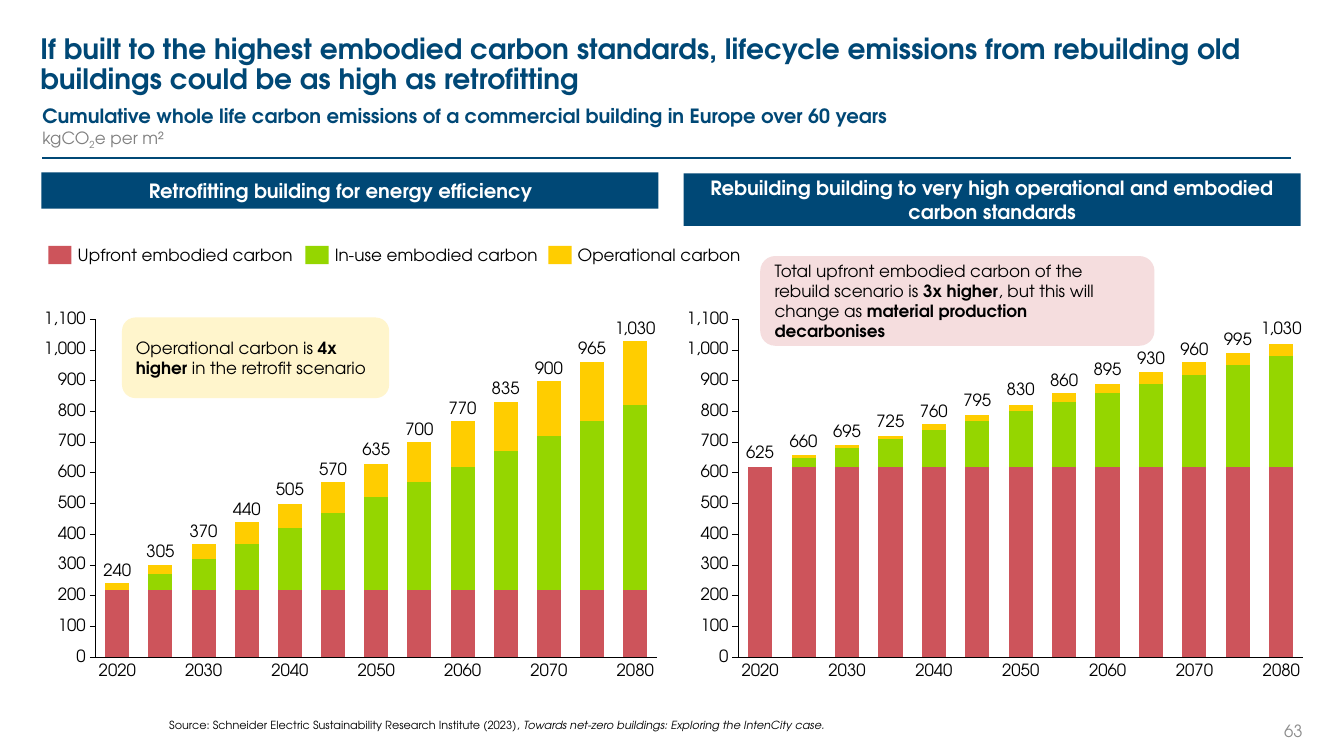
from lxml import etree
from pptx import Presentation
from pptx import util as u
from pptx.chart.data import CategoryChartData
from pptx.dml.color import RGBColor
from pptx.enum import chart as charts, shapes, text
from pptx.oxml.ns import qn

NAVY = RGBColor(0x00, 0x48, 0x76)
BLACK = RGBColor(0x00, 0x00, 0x00)
WHITE = RGBColor(0xFF, 0xFF, 0xFF)
GREY = RGBColor(0x80, 0x80, 0x80)
PAGE_GREY = RGBColor(0x8C, 0x8C, 0x8C)
RED = RGBColor(0xCD, 0x54, 0x5B)
GREEN = RGBColor(0x95, 0xD6, 0x00)
YELLOW = RGBColor(0xFF, 0xCD, 0x00)
PALE_YELLOW = RGBColor(0xFF, 0xF5, 0xCC)
PALE_RED = RGBColor(0xF5, 0xDD, 0xDE)

FONT = "TeX Gyre Adventor"
LEFT, CENTER, RIGHT = text.PP_ALIGN.LEFT, text.PP_ALIGN.CENTER, text.PP_ALIGN.RIGHT
TOP, MIDDLE, BOTTOM = text.MSO_ANCHOR.TOP, text.MSO_ANCHOR.MIDDLE, text.MSO_ANCHOR.BOTTOM
RECT, ROUNDED = shapes.MSO_SHAPE.RECTANGLE, shapes.MSO_SHAPE.ROUNDED_RECTANGLE

# Chart geometry shared by both panels
CHART_TOP, CHART_HEIGHT = 2.97, 3.75
PLOT_X, PLOT_Y, PLOT_W, PLOT_H = 0.11, 0.053, 0.875, 0.894
AXIS_MAX = 1100
LABEL_HEIGHT, LABEL_RISE = 0.18, 0.21
PERIODS = range(13)


class Deck:
    """Holds the style and the current slide."""

    def __init__(self):
        self.prs = Presentation()
        self.prs.slide_width = u.Inches(13.33)
        self.prs.slide_height = u.Inches(7.5)
        self.slide = self.prs.slides.add_slide(self.prs.slide_layouts[5])

    def frame(self, shape, insets=(0, 0, 0, 0), anchor=TOP, wrap=True):
        tf = shape.text_frame
        tf.word_wrap = wrap
        tf.auto_size = text.MSO_AUTO_SIZE.NONE
        tf.vertical_anchor = anchor
        tf.margin_left, tf.margin_top, tf.margin_right, tf.margin_bottom = map(u.Inches, insets)
        return tf

    def add_runs(self, paragraph, parts, size, color, bold=False, align=LEFT, spacing=1.0):
        """Parts are strings, or (string, "bold" or "italic") pairs."""
        paragraph.alignment = align
        paragraph.line_spacing = spacing
        for part in [parts] if isinstance(parts, str) else parts:
            words, emphasis = (part, "") if isinstance(part, str) else part
            run = paragraph.add_run()
            run.text = words
            run.font.name, run.font.size = FONT, u.Pt(size)
            run.font.bold = bold or emphasis == "bold"
            run.font.italic = emphasis == "italic"
            run.font.color.rgb = color

    def title(self, words, at):
        title = self.slide.shapes.title
        title.left, title.top, title.width, title.height = map(u.Inches, at)
        tf = self.frame(title, anchor=MIDDLE)
        self.add_runs(tf.paragraphs[0], words, 20, NAVY, bold=True, spacing=0.9)

    def text(self, parts, at, size=12, color=BLACK, insets=(0, 0, 0, 0), anchor=TOP,
             wrap=True, **style):
        box = self.slide.shapes.add_textbox(*map(u.Inches, at))
        tf = self.frame(box, insets, anchor, wrap)
        self.add_runs(tf.paragraphs[0], parts, size, color, **style)
        return tf

    def label(self, words, at, align=CENTER, anchor=TOP):
        self.text(words, at, anchor=anchor, wrap=False, align=align, spacing=0.9)

    def block(self, preset, at, fill):
        block = self.slide.shapes.add_shape(preset, *map(u.Inches, at))
        block.shadow.inherit = False
        block.fill.solid()
        block.fill.fore_color.rgb = fill
        block.line.fill.background()
        return block

    def header(self, words, at, right_inset=0.08):
        tf = self.frame(self.block(RECT, at, NAVY), (0.08, 0.08, right_inset, 0.08), MIDDLE)
        self.add_runs(tf.paragraphs[0], words, 14, WHITE, bold=True, align=CENTER)

    def callout(self, parts, at, fill):
        tf = self.frame(self.block(ROUNDED, at, fill), (0.1, 0.05, 0.1, 0.05), MIDDLE)
        self.add_runs(tf.paragraphs[0], parts, 12, BLACK)

    def rule(self, left, right, y):
        rule = self.slide.shapes.add_connector(
            shapes.MSO_CONNECTOR.STRAIGHT, *map(u.Inches, (left, y, right, y)))
        rule.line.color.rgb = NAVY
        rule.line.width = u.Pt(1.5)
        etree.SubElement(rule.element.spPr, qn("a:effectLst"))

    def stacked_chart(self, series, left, width):
        data = CategoryChartData()
        data.categories = [str(period + 1) for period in PERIODS]
        for name, values, _ in series:
            data.add_series(name, values)
        chart = self.slide.shapes.add_chart(
            charts.XL_CHART_TYPE.COLUMN_STACKED,
            *map(u.Inches, (left, CHART_TOP, width, CHART_HEIGHT)), data).chart
        chart.has_legend = chart.has_title = False
        chart.font.name, chart.font.size = FONT, u.Pt(12)
        chart.font.color.rgb = BLACK
        plot = chart.plots[0]
        plot.gap_width, plot.overlap, plot.vary_by_categories = 80, 100, False
        for bars, (_, _, color) in zip(plot.series, series):
            bars.format.fill.solid()
            bars.format.fill.fore_color.rgb = color

        years, emissions = chart.category_axis, chart.value_axis
        for axis in (years, emissions):
            axis.has_major_gridlines = False
            axis.format.line.color.rgb = BLACK
            axis.format.line.width = u.Pt(0.75)
        years.major_tick_mark = charts.XL_TICK_MARK.NONE
        years.tick_label_position = charts.XL_TICK_LABEL_POSITION.NONE
        emissions.major_tick_mark = charts.XL_TICK_MARK.OUTSIDE
        emissions.minimum_scale, emissions.maximum_scale = 0, AXIS_MAX
        emissions.major_unit = 100
        emissions.tick_labels.number_format = '#,##0;"-"#,##0'
        emissions.tick_labels.number_format_is_linked = False

        # Fixed inner plot area
        area = chart.element.find(".//" + qn("c:plotArea"))
        layout = area.find(qn("c:layout"))
        if layout is None:
            layout = etree.Element(qn("c:layout"))
            area.insert(0, layout)
        manual = etree.SubElement(layout, qn("c:manualLayout"))
        for tag, value in (("layoutTarget", "inner"), ("xMode", "edge"), ("yMode", "edge"),
                           ("x", PLOT_X), ("y", PLOT_Y), ("w", PLOT_W), ("h", PLOT_H)):
            etree.SubElement(manual, qn("c:" + tag)).set("val", str(value))

    def panel(self, series, totals, left, width):
        """A stacked chart with totals above the bars and a year under every second one."""
        self.stacked_chart(series, left, width)
        step = width * PLOT_W / len(PERIODS)
        plot_top = CHART_TOP + CHART_HEIGHT * PLOT_Y
        for period, total in zip(PERIODS, totals):
            center = left + width * PLOT_X + step * (period + 0.5)
            if period % 2 == 0:
                self.label(str(2020 + 5 * period), (center - 0.19, 6.57, 0.38, LABEL_HEIGHT))
            bar_top = plot_top + CHART_HEIGHT * PLOT_H * (1 - total / AXIS_MAX)
            self.label(f"{total:,}", (center - 0.23, bar_top - LABEL_RISE, 0.46, LABEL_HEIGHT),
                       anchor=BOTTOM)


def main():
    deck = Deck()

    # Heading
    deck.title("If built to the highest embodied carbon standards, lifecycle emissions from "
               "rebuilding old buildings could be as high as retrofitting",
               (0.4, 0.26, 12.51, 0.78))
    subtitle = deck.text("Cumulative whole life carbon emissions of a commercial building in "
                         "Europe over 60 years", (0.42, 1.03, 11.03, 0.44), 14, NAVY, bold=True)
    unit = subtitle.add_paragraph()
    deck.add_runs(unit, ["kgCO", "2", "e per m²"], 12, GREY)
    unit.runs[1].font._element.set("baseline", "-25000")
    deck.rule(0.42, 12.8, 1.57)

    # Charts
    retrofit = [("Upfront embodied carbon", [220] * 13, RED),
                ("In-use embodied carbon", [50 * period for period in PERIODS], GREEN),
                ("Operational carbon",
                 [20, 30, 50, 70, 80, 100, 110, 130, 150, 160, 180, 190, 210], YELLOW)]
    rebuild = [("Upfront embodied carbon", [620] * 13, RED),
               ("In-use embodied carbon", [30 * period for period in PERIODS], GREEN),
               ("Operational carbon",
                [0, 10, 10, 10, 20, 20, 20, 30, 30, 40, 40, 40, 40], YELLOW)]
    deck.panel(retrofit, [240, 305, 370, 440, 505, 570, 635, 700, 770, 835, 900, 965, 1030],
               0.25, 6.36)
    deck.panel(rebuild, [625, 660, 695, 725, 760, 795, 830, 860, 895, 930, 960, 995, 1030],
               6.62, 6.4)

    # Legend
    for (name, _, color), left, width in zip(retrofit, (0.48, 3.03, 5.44), (2.14, 2.02, 1.62)):
        deck.block(RECT, (left, 2.44, 0.23, 0.18), color)
        deck.label(name, (left + 0.29, 2.45, width, 0.18), align=LEFT, anchor=MIDDLE)

    # Callouts
    deck.callout(["Operational carbon is ", ("4x higher ", "bold"), "in the retrofit scenario"],
                 (1.21, 3.15, 2.65, 0.8), PALE_YELLOW)
    deck.callout(["Total upfront embodied carbon of the rebuild scenario is ",
                  ("3x higher", "bold"), ", but this will change as ",
                  ("material production decarbonises", "bold")],
                 (7.54, 2.54, 3.91, 0.89), PALE_RED)

    # Panel headers
    deck.header("Retrofitting building for energy efficiency", (0.41, 1.71, 6.12, 0.36), 0.26)
    deck.header("Rebuilding building to very high operational and embodied carbon standards",
                (6.78, 1.72, 6.12, 0.52))

    # Footer
    deck.text(["Source: Schneider Electric Sustainability Research Institute (2023), ",
               ("Towards net-zero buildings: Exploring the IntenCity case.", "italic")],
              (1.58, 7.08, 10.58, 0.26), 8, insets=(0.1, 0.05, 0.1, 0.05))
    deck.text("63", (12.37, 6.94, 0.55, 0.41), 12, PAGE_GREY, anchor=BOTTOM, align=RIGHT)

    deck.prs.save("out.pptx")


if __name__ == "__main__":
    main()
